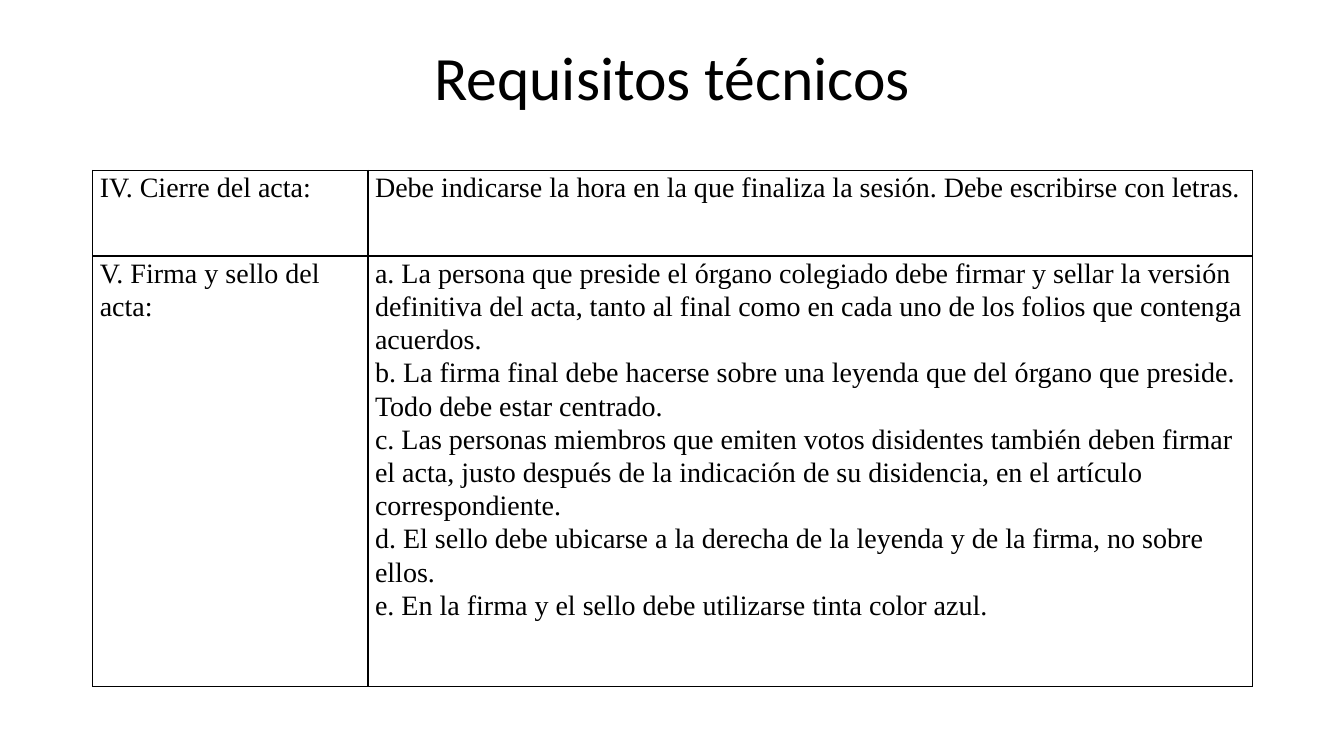
from lxml.etree import SubElement
from pptx import Presentation
from pptx.dml.color import RGBColor
from pptx.enum.text import MSO_ANCHOR as Anchor, PP_ALIGN as Align
from pptx.oxml.ns import qn
from pptx.util import Inches, Pt

BLACK = "000000"
LEFT, WIDTH = 0.92, 11.5
COLUMN_WIDTHS = [2.73, 8.77]
ROW_HEIGHTS = [0.85, 4.27]
REQUIREMENTS = [
    (["IV. Cierre del acta:"],
     ["Debe indicarse la hora en la que finaliza la sesión. Debe escribirse con letras."]),
    (["V. Firma y sello del acta:"],
     ["a. La persona que preside el órgano colegiado debe firmar y sellar la versión "
      "definitiva del acta, tanto al final como en cada uno de los folios que contenga acuerdos.",
      "b. La firma final debe hacerse sobre una leyenda que del órgano que preside. "
      "Todo debe estar centrado.",
      "c. Las personas miembros que emiten votos disidentes también deben firmar el acta, "
      "justo después de la indicación de su disidencia, en el artículo correspondiente.",
      "d. El sello debe ubicarse a la derecha de la leyenda y de la firma, no sobre ellos.",
      "e. En la firma y el sello debe utilizarse tinta color azul."]),
]


def color(value):
    return RGBColor.from_string(value)


def write(frame, lines, font, size, spacing, align=Align.LEFT):
    """Fill a text frame, one paragraph per line."""
    frame.text = "\n".join(lines)
    for para in frame.paragraphs:
        para.alignment = align
        para.line_spacing = spacing
        for span in para.runs:
            span.font.name = font
            span.font.size = Pt(size)
            span.font.color.rgb = color(BLACK)


def add_title(page, text):
    box = page.shapes.add_textbox(Inches(LEFT), Inches(0.4), Inches(WIDTH), Inches(0.79))
    frame = box.text_frame
    frame.word_wrap = True
    frame.vertical_anchor = Anchor.MIDDLE
    write(frame, [text], "Calibri", 44, 0.9, Align.CENTER)


def add_borders(cell, width):
    """Draw the four cell edges; they must come before the cell fill."""
    properties = cell._tc.get_or_add_tcPr()
    for edge in ("a:lnL", "a:lnR", "a:lnT", "a:lnB"):
        line = SubElement(properties, qn(edge), w=str(Pt(width)))
        fill = SubElement(line, qn("a:solidFill"))
        SubElement(fill, qn("a:srgbClr"), val=BLACK)


def format_cell(cell, lines):
    cell.margin_left = cell.margin_right = Inches(0.07)
    cell.margin_top = cell.margin_bottom = 0
    write(cell.text_frame, lines, "Times New Roman", 20, 1.07)
    add_borders(cell, 1)
    cell.fill.background()


def add_requirements(page):
    table = page.shapes.add_table(
        len(ROW_HEIGHTS), len(COLUMN_WIDTHS), Inches(LEFT), Inches(1.69),
        Inches(WIDTH), Inches(sum(ROW_HEIGHTS))).table
    table.first_row = table.horz_banding = False
    for column, width in zip(table.columns, COLUMN_WIDTHS):
        column.width = Inches(width)
    for row, height, entries in zip(table.rows, ROW_HEIGHTS, REQUIREMENTS):
        row.height = Inches(height)
        for cell, lines in zip(row.cells, entries):
            format_cell(cell, lines)


def main():
    deck = Presentation()
    deck.slide_width, deck.slide_height = Inches(13.33), Inches(7.5)
    page = deck.slides.add_slide(deck.slide_layouts[6])
    add_title(page, "Requisitos técnicos")
    add_requirements(page)
    deck.save("out.pptx")


if __name__ == "__main__":
    main()
